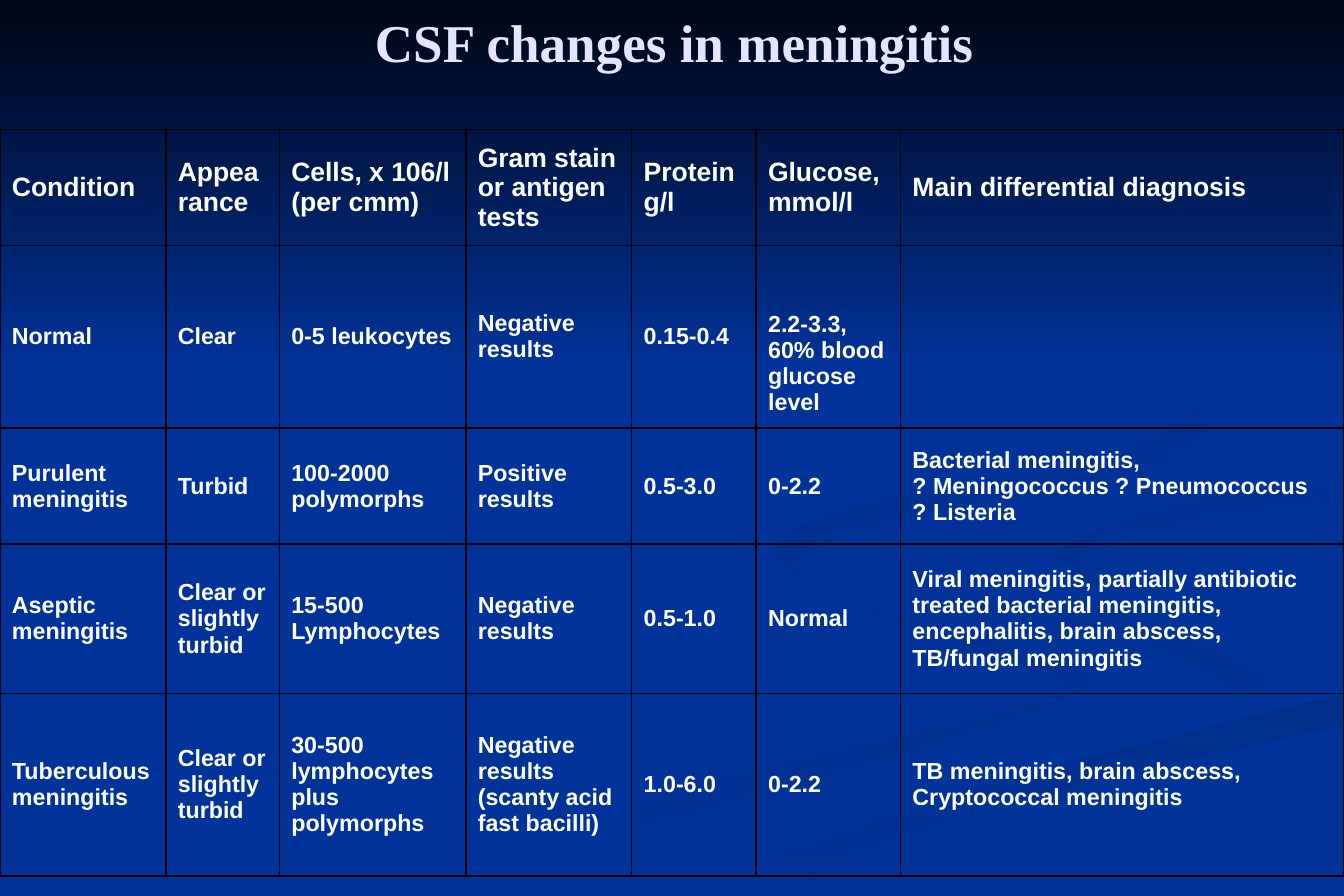
import pptx
import pptx.dml.color
import pptx.enum.shapes
import pptx.enum.text
import pptx.oxml
import pptx.oxml.ns
import pptx.util

Pt = pptx.util.Pt

COLORS = {
    "blue": "003399", "night": "000514", "title": "E5E5FF", "text": "FFFFFF",
    "border": "000000", "tail": "003193", "wave": "002F8C", "hook": "003091",
    "curl": "002F8E",
}
TITLE = "CSF changes in meningitis"
WIDTHS = [100, 68.4, 112.4, 100, 75, 87, 267.2]
HEIGHTS = [70, 110, 70, 90, 110]
ROWS = [
    ["Condition", "Appearance", "Cells, x 106/l (per cmm)", "Gram stain or antigen tests",
     "Protein g/l", "Glucose, mmol/l", "Main differential diagnosis"],
    ["Normal", "Clear", "0-5 leukocytes", "Negative results", "0.15-0.4",
     "2.2-3.3, 60% blood glucose level", ""],
    ["Purulent meningitis", "Turbid", "100-2000 polymorphs", "Positive results", "0.5-3.0",
     "0-2.2", "Bacterial meningitis,\n? Meningococcus ? Pneumococcus\n? Listeria"],
    ["Aseptic meningitis", "Clear or slightly turbid", "15-500 Lymphocytes",
     "Negative results", "0.5-1.0", "Normal",
     "Viral meningitis, partially antibiotic treated bacterial meningitis, "
     "encephalitis, brain abscess, TB/fungal meningitis"],
    ["Tuberculous meningitis", "Clear or slightly turbid",
     "30-500 lymphocytes plus polymorphs", "Negative results (scanty acid fast bacilli)",
     "1.0-6.0", "0-2.2", "TB meningitis, brain abscess, Cryptococcal meningitis"],
]
LOWERED = (1, 5)

DROP = [(587, 334), (614, 359), (705, 382), (763, 410)]
CREST = [(408, 539), (510, 499), (645, 459), (809, 418)]
ARM = [(633, 333), (701, 305), (809, 289)]
RIBBONS = [
    ("blue", "tail", 0, [
        [(466, 330), (498, 357), (633, 398), (649, 418), (527, 461), (404, 495), (292, 539)],
        [(243, 539), (404, 476), (607, 428), (636, 408), (511, 364), (466, 330)]]),
    ("blue", "tail", 315, [
        DROP + [(724, 436)],
        [(724, 436), (744, 418), (692, 388), (621, 369), (587, 334)]]),
    ("wave", "blue", 270, [CREST, [(809, 438), (665, 469), (526, 511), (463, 539)]]),
    ("blue", None, 0, [
        DROP + [(704, 440), (570, 472), (387, 539)],
        CREST,
        [(809, 387), (701, 366)] + ARM,
        [(809, 279), (690, 296), (611, 311), (587, 334)]]),
    ("hook", "blue", 315, [
        ARM, [(809, 302), (726, 313), (655, 335), (669, 357)], [(669, 357), (633, 333)]]),
    ("curl", "blue", 315, [
        [(618, 168), (683, 198), (724, 248), (693, 282), (554, 310), (480, 338), (503, 360)],
        [(503, 360), (467, 333), (516, 304), (641, 282), (720, 246), (685, 201), (618, 168)]]),
]
STEPS = 6


def color(name):
    return pptx.dml.color.RGBColor.from_string(COLORS[name])


def blend(a, b, c, d, t):
    return b + t * (c - a + t * (2 * a - 5 * b + 4 * c - d + t * (3 * (b - c) + d - a))) / 2


def curve(knots):
    ends = [knots[0]] + knots + [knots[-1]]
    points = [
        tuple(blend(*axis, step / STEPS) for axis in zip(*ends[i:i + 4]))
        for i in range(len(knots) - 1) for step in range(STEPS)]
    return points + [knots[-1]]


def paint(shape, start, end, angle):
    shape.shadow.inherit = False
    shape.line.fill.background()
    if end is None:
        shape.fill.solid()
        shape.fill.fore_color.rgb = color(start)
        return
    shape.fill.gradient()
    shape.fill.gradient_angle = angle
    for stop, name in zip(shape.fill.gradient_stops, (start, end)):
        stop.color.rgb = color(name)


def write(para, text, font, size, tone):
    run = para.add_run()
    run.text = text
    run.font.name = font
    run.font.size = Pt(size)
    run.font.bold = True
    run.font.color.rgb = color(tone)


def border(cell):
    props = cell._tc.get_or_add_tcPr()
    for side in ("lnL", "lnR", "lnT", "lnB"):
        props.append(pptx.oxml.parse_xml(
            f'<a:{side} {pptx.oxml.ns.nsdecls("a")} w="{Pt(1)}"><a:solidFill>'
            f'<a:srgbClr val="{COLORS["border"]}"/></a:solidFill></a:{side}>'))


def draw_back(slide):
    slide.background.fill.solid()
    slide.background.fill.fore_color.rgb = color("blue")
    for start, end, angle, edges in RIBBONS:
        points = [point for edge in edges for point in curve(edge)]
        outline = slide.shapes.build_freeform(*points[0], scale=Pt(1))
        outline.add_line_segments(points[1:], close=True)
        paint(outline.convert_to_shape(), start, end, angle)
    band = slide.shapes.add_shape(
        pptx.enum.shapes.MSO_SHAPE.RECTANGLE, 0, 0, Pt(810), Pt(222))
    paint(band, "night", "blue", 270)


def draw_table(slide):
    table = slide.shapes.add_table(
        len(ROWS), len(WIDTHS), 0, Pt(78), Pt(sum(WIDTHS)), Pt(sum(HEIGHTS))).table
    table.first_row = False
    table.horz_banding = False
    for col, width in zip(table.columns, WIDTHS):
        col.width = Pt(width)
    for row, height in zip(table.rows, HEIGHTS):
        row.height = Pt(height)
    for r, texts in enumerate(ROWS):
        for c, text in enumerate(texts):
            cell = table.cell(r, c)
            border(cell)
            cell.fill.background()
            cell.vertical_anchor = pptx.enum.text.MSO_ANCHOR.MIDDLE
            for i, line in enumerate(text.split("\n") if text else []):
                frame = cell.text_frame
                para = frame.add_paragraph() if i else frame.paragraphs[0]
                write(para, line, "Arial", 14 if r else 16, "text")
    table.cell(*LOWERED).margin_top = Pt(35.6)


def draw_title(slide):
    title = slide.shapes.title
    title.left, title.top, title.width, title.height = Pt(27), Pt(2), Pt(759), Pt(46)
    title.text_frame.vertical_anchor = pptx.enum.text.MSO_ANCHOR.MIDDLE
    para = title.text_frame.paragraphs[0]
    para.alignment = pptx.enum.text.PP_ALIGN.CENTER
    write(para, TITLE, "Times New Roman", 32, "title")
    title.element.getparent().append(title.element)


def main():
    deck = pptx.Presentation()
    deck.slide_width, deck.slide_height = Pt(810), Pt(540)
    slide = deck.slides.add_slide(deck.slide_layouts[5])
    draw_back(slide)
    draw_table(slide)
    draw_title(slide)
    deck.save("out.pptx")


if __name__ == "__main__":
    main()
